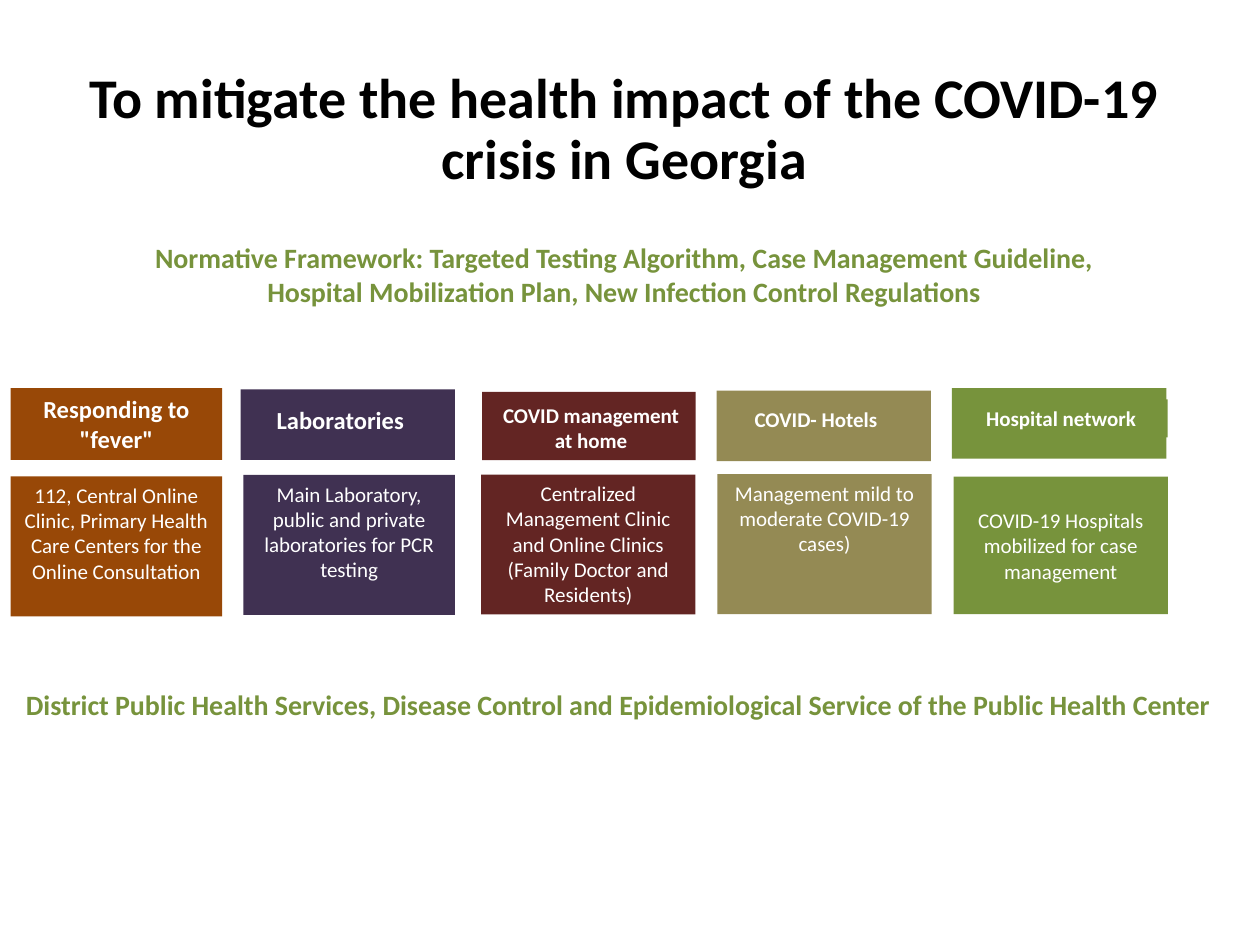
from pptx import Presentation
from pptx.dml.color import RGBColor
from pptx.enum.shapes import MSO_SHAPE
from pptx.enum.text import MSO_ANCHOR, PP_ALIGN
from pptx.util import Pt

RECTANGLE = MSO_SHAPE.RECTANGLE
CENTER = PP_ALIGN.CENTER
TOP, MIDDLE = MSO_ANCHOR.TOP, MSO_ANCHOR.MIDDLE

FONT = "Calibri"
COLORS = {
    "black": "000000", "white": "FFFFFF", "orange": "984807", "purple": "403152",
    "maroon": "632523", "tan": "948A54", "green": "77933C",
}

# Free text: text, box (left, top, width, height), size, color, line spacing
HEADINGS = [
    ("To mitigate the health impact of the COVID-19 crisis in Georgia",
     (33, 36.7, 647.5, 58.3), 32, "black", 0.9),
    ("Normative Framework: Targeted Testing Algorithm, Case Management Guideline, "
     "Hospital Mobilization Plan, New Infection Control Regulations",
     (57.5, 134, 598.5, 46), 16, "green", None),
    ("District Public Health Services, Disease Control and Epidemiological Service "
     "of the Public Health Center",
     (0, 389.5, 707, 26.6), 16, "green", None),
]

# Header box and the label box lying on it are (left, top, width, height),
# with left measured from the column's own left edge
COLUMNS = [
    {"color": "orange", "label": "Responding to \"fever\"", "size": 14,
     "header": None, "label_box": (1, 221.8, 121, 41), "wrap": True,
     "body": "112, Central Online Clinic, Primary Health Care Centers for the Online Consultation",
     "body_box": (1, 272.2, 121, 80), "anchor": TOP},
    {"color": "purple", "label": "Laboratories", "size": 14,
     "header": (-2.5, 222.5, 122.5, 40.3), "label_box": (10.5, 228.2, 88, 24.5), "wrap": False,
     "body": "Main Laboratory, public and private laboratories for PCR testing",
     "body_box": (-1, 271.4, 121, 80), "anchor": TOP},
    {"color": "maroon", "label": "COVID management at home", "size": 12,
     "header": (0.5, 224, 122, 39), "label_box": (3.8, 226.6, 118, 36), "wrap": True,
     "body": "Centralized Management Clinic and Online Clinics (Family Doctor and Residents)",
     "body_box": (0, 271.2, 122.4, 80), "anchor": TOP},
    {"color": "tan", "label": "COVID- Hotels", "size": 12,
     "header": (-0.5, 223.2, 122.5, 40.3), "label_box": (13.3, 229, 86, 21.8), "wrap": False,
     "body": "Management mild to moderate COVID-19 cases)",
     "body_box": (0, 271, 122.4, 80), "anchor": TOP},
    {"color": "green", "label": "Hospital network", "size": 12,
     "header": (-1, 221.8, 122.5, 40.3), "label_box": (0.5, 228.2, 121.7, 21.8), "wrap": True,
     "body": "COVID-19 Hospitals mobilized for case management",
     "body_box": (0, 272.4, 122.4, 78.5), "anchor": MIDDLE},
]
FIRST_LEFT, COLUMN_PITCH = 5, 135


def color(name):
    return RGBColor.from_string(COLORS[name])


def write(shape, text, size, color_name, bold, anchor=TOP, wrap=True, spacing=None):
    frame = shape.text_frame
    frame.word_wrap = wrap
    frame.vertical_anchor = anchor
    paragraph = frame.paragraphs[0]
    paragraph.alignment = CENTER
    if spacing:
        paragraph.line_spacing = spacing
    run = paragraph.add_run()
    run.text = text
    run.font.name = FONT
    run.font.size = Pt(size)
    run.font.bold = bold
    run.font.color.rgb = color(color_name)


def add_box(slide, column_left, box, fill):
    left, top, width, height = box
    shape = slide.shapes.add_shape(
        RECTANGLE, Pt(column_left + left), Pt(top), Pt(width), Pt(height))
    shape.shadow.inherit = False
    shape.fill.solid()
    shape.fill.fore_color.rgb = color(fill)
    shape.line.fill.background()
    return shape


def main():
    presentation = Presentation()
    presentation.slide_width, presentation.slide_height = Pt(720), Pt(540)
    slide = presentation.slides.add_slide(presentation.slide_layouts[6])

    # Title, framework line and closing line
    for text, box, size, color_name, spacing in HEADINGS:
        heading = slide.shapes.add_textbox(*map(Pt, box))
        write(heading, text, size, color_name, True, spacing=spacing)

    # Five columns: header, its label, and the body below
    for index, column in enumerate(COLUMNS):
        left = FIRST_LEFT + index * COLUMN_PITCH
        fill = column["color"]
        if column["header"]:
            add_box(slide, left, column["header"], fill)
        label = add_box(slide, left, column["label_box"], fill)
        write(label, column["label"], column["size"], "white", True, wrap=column["wrap"])
        body = add_box(slide, left, column["body_box"], fill)
        write(body, column["body"], 12, "white", False, anchor=column["anchor"])

    presentation.save("out.pptx")


if __name__ == "__main__":
    main()
